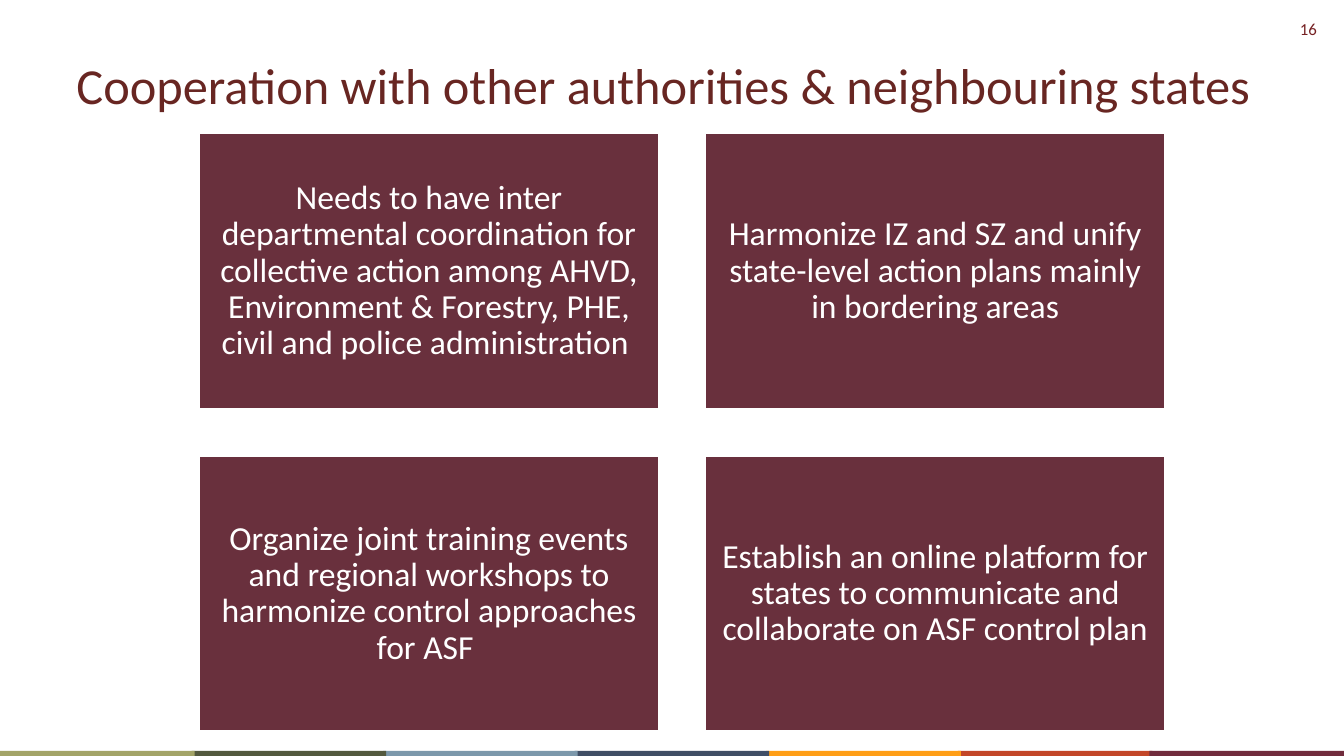
from dataclasses import dataclass

import pptx
import pptx.dml.color
import pptx.enum.shapes
import pptx.enum.text
import pptx.util

ALIGN = pptx.enum.text.PP_ALIGN
ANCHOR = pptx.enum.text.MSO_ANCHOR
FONT = "Calibri"
WHITE = "FFFFFF"


@dataclass(frozen=True)
class Grid:
    left: float
    top: float
    width: float
    height: float
    column_step: float
    row_step: float = 0

    def cell(self, column: int, row: int = 0) -> tuple:
        x = self.left + column * self.column_step
        y = self.top + row * self.row_step
        return tuple(pptx.util.Inches(v) for v in (x, y, self.width, self.height))


@dataclass(frozen=True)
class Card:
    column: int
    row: int
    text: str


@dataclass(frozen=True)
class Strip:
    column: int
    color: str


CARD_GRID = Grid(1.97, 1.32, 4.57, 2.74, 5.02, 3.2)
STRIP_GRID = Grid(0, 7.45, 1.93, 0.06, 1.9)

CARDS = [
    Card(0, 0, "Needs to have inter departmental coordination for collective action among "
               "AHVD, Environment & Forestry, PHE, civil and police administration "),
    Card(1, 0, "Harmonize IZ and SZ and unify state-level action plans mainly in bordering areas"),
    Card(0, 1, "Organize joint training events and regional workshops to harmonize control "
               "approaches for ASF "),
    Card(1, 1, "Establish an online platform for states to communicate and collaborate on "
               "ASF control plan"),
]

STRIPS = [
    Strip(5, "C34628"),
    Strip(6, "712C3D"),
    Strip(4, "FF9E16"),
    Strip(3, "404E65"),
    Strip(2, "7C98AB"),
    Strip(1, "53593E"),
    Strip(0, "A3A467"),
]


def rgb(color: str) -> pptx.dml.color.RGBColor:
    return pptx.dml.color.RGBColor.from_string(color)


def write(sp, text: str, size: float, color: str, align) -> None:
    tf = sp.text_frame
    tf.word_wrap = True
    tf.vertical_anchor = ANCHOR.MIDDLE
    p = tf.paragraphs[0]
    p.text = text
    p.alignment = align
    p.font.name = FONT
    p.font.size = pptx.util.Pt(size)
    p.font.color.rgb = rgb(color)


def add_rectangle(slide, box: tuple, color: str):
    sp = slide.shapes.add_shape(pptx.enum.shapes.MSO_SHAPE.RECTANGLE, *box)
    sp.shadow.inherit = False
    sp.fill.solid()
    sp.fill.fore_color.rgb = rgb(color)
    sp.line.fill.background()
    return sp


def add_card(slide, card: Card) -> None:
    sp = add_rectangle(slide, CARD_GRID.cell(card.column, card.row), "69303D")
    sp.line.color.rgb = rgb(WHITE)
    sp.line.width = pptx.util.Pt(2)
    write(sp, card.text, 24, WHITE, ALIGN.CENTER)
    tf = sp.text_frame
    tf.margin_left = tf.margin_right = pptx.util.Inches(0.1)
    tf.margin_top = tf.margin_bottom = pptx.util.Inches(0.1)
    tf.paragraphs[0].line_spacing = 0.9


def add_label(slide, box: Grid, text: str, size: float, color: str, align) -> None:
    write(slide.shapes.add_textbox(*box.cell(0)), text, size, color, align)


def main() -> None:
    prs = pptx.Presentation()
    prs.slide_width = pptx.util.Inches(13.33)
    prs.slide_height = pptx.util.Inches(7.5)
    slide = prs.slides.add_slide(prs.slide_layouts[6])

    add_label(slide, Grid(12.46, 0.14, 0.7, 0.3, 0), "16", 12, "762123", ALIGN.RIGHT)
    for strip in STRIPS:
        add_rectangle(slide, STRIP_GRID.cell(strip.column), strip.color)
    add_label(slide, Grid(0.66, 0.47, 12, 0.74, 0),
              "Cooperation with other authorities & neighbouring states",
              36, "682622", ALIGN.LEFT)
    for card in CARDS:
        add_card(slide, card)

    prs.save("out.pptx")


if __name__ == "__main__":
    main()
